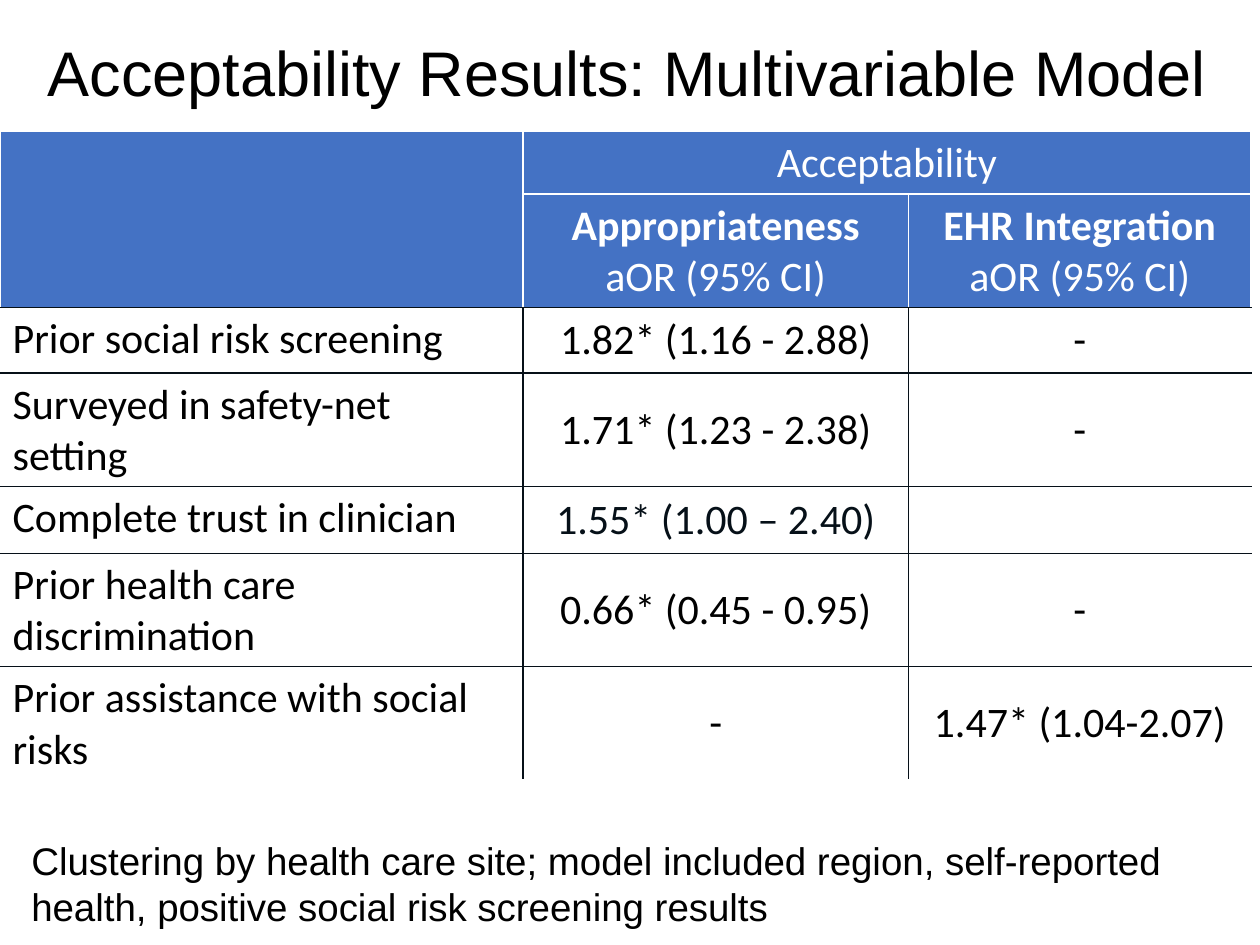
from lxml.etree import SubElement
from pptx import Presentation
from pptx.dml.color import RGBColor
from pptx.enum.text import MSO_ANCHOR, PP_ALIGN
from pptx.oxml.ns import qn
from pptx.util import Inches, Pt

BLACK = RGBColor(0x00, 0x00, 0x00)
WHITE = RGBColor(0xFF, 0xFF, 0xFF)
BLUE = RGBColor(0x44, 0x72, 0xC4)
NAVY = RGBColor(0x06, 0x10, 0x18)


def write(frame, *lines, size=24, font="Calibri", color=BLACK, bold_first=False,
          align=PP_ALIGN.LEFT, spacing=None, before=None, after=None):
    """Fill a text frame with one paragraph per line, all in one format."""
    frame.word_wrap = True
    for i, line in enumerate(lines):
        para = frame.add_paragraph() if i else frame.paragraphs[0]
        para.alignment = align
        para.line_spacing = spacing
        para.space_before = before
        para.space_after = after
        run = para.add_run()
        run.text = line
        run.font.size = Pt(size)
        run.font.name = font
        run.font.bold = bold_first and i == 0
        run.font.color.rgb = color


def paint(cell, fill, edges):
    """Set the fill and the borders, given as side and colour in the order L, R, T, B."""
    for side, color in edges.items():
        line = SubElement(cell._tc.get_or_add_tcPr(), qn(f"a:ln{side}"), w=str(Pt(1)))
        solid = SubElement(line, qn("a:solidFill"))
        SubElement(solid, qn("a:srgbClr"), val=str(color))
    cell.fill.solid()
    cell.fill.fore_color.rgb = fill


prs = Presentation()
prs.slide_width, prs.slide_height = Inches(10), Inches(7.5)
slide = prs.slides.add_slide(prs.slide_layouts[6])

title = slide.shapes.add_textbox(Inches(0.28), Inches(0.42), Inches(9.65), Inches(0.5))
title.text_frame.vertical_anchor = MSO_ANCHOR.BOTTOM
write(title.text_frame, "Acceptability Results: Multivariable Model",
      size=36, font="Arial", spacing=0.9)

note = slide.shapes.add_textbox(Inches(0.15), Inches(6.59), Inches(9.42), Inches(0.84))
write(note.text_frame, "Clustering by health care site; model included region, "
      "self-reported health, positive social risk screening results",
      size=22, font="Arial")

results = [
    ("Prior social risk screening", "1.82* (1.16 - 2.88)", "-"),
    ("Surveyed in safety-net setting", "1.71* (1.23 - 2.38)", "-"),
    ("Complete trust in clinician", "1.55* (1.00 – 2.40)", ""),
    ("Prior health care discrimination", "0.66* (0.45 - 0.95)", "-"),
    ("Prior assistance with social risks", "-", "1.47* (1.04-2.07)"),
]
widths = [4.15, 3.06, 2.72]
heights = [0.5, 0.9, 0.52, 0.9, 0.53, 0.9, 0.9]
table = slide.shapes.add_table(len(heights), len(widths), Inches(0), Inches(1.04),
                               Inches(sum(widths)), Inches(sum(heights))).table
table.first_row = table.horz_banding = False
for column, width in zip(table.columns, widths):
    column.width = Inches(width)
for row, height in zip(table.rows, heights):
    row.height = Inches(height)

# Header
for r in range(2):
    for c in range(3):
        base = NAVY if r == 1 or c == 0 else WHITE
        paint(table.cell(r, c), BLUE, {"L": WHITE, "R": WHITE, "T": WHITE, "B": base})
table.cell(0, 0).merge(table.cell(1, 0))
table.cell(0, 1).merge(table.cell(0, 2))
write(table.cell(0, 1).text_frame, "Acceptability", color=WHITE, align=PP_ALIGN.CENTER)
for c, name in enumerate(["Appropriateness", "EHR Integration"], 1):
    write(table.cell(1, c).text_frame, name, "aOR (95% CI)",
          color=WHITE, bold_first=True, align=PP_ALIGN.CENTER)

# Body
last = len(heights) - 1
for r, texts in enumerate(results, 2):
    for c, text in enumerate(texts):
        cell = table.cell(r, c)
        edges = {"L": NAVY if c else WHITE, "R": NAVY if c < 2 else WHITE,
                 "T": NAVY, "B": NAVY if r < last else WHITE}
        paint(cell, WHITE, edges)
        if c:
            cell.vertical_anchor = MSO_ANCHOR.MIDDLE
        if text:
            write(cell.text_frame, text,
                  color=NAVY if "1.55" in text else BLACK,
                  align=PP_ALIGN.CENTER if c else PP_ALIGN.LEFT,
                  before=Pt(6) if c < 2 else None,
                  after=Pt(6) if c != 1 else None)

prs.save("out.pptx")
